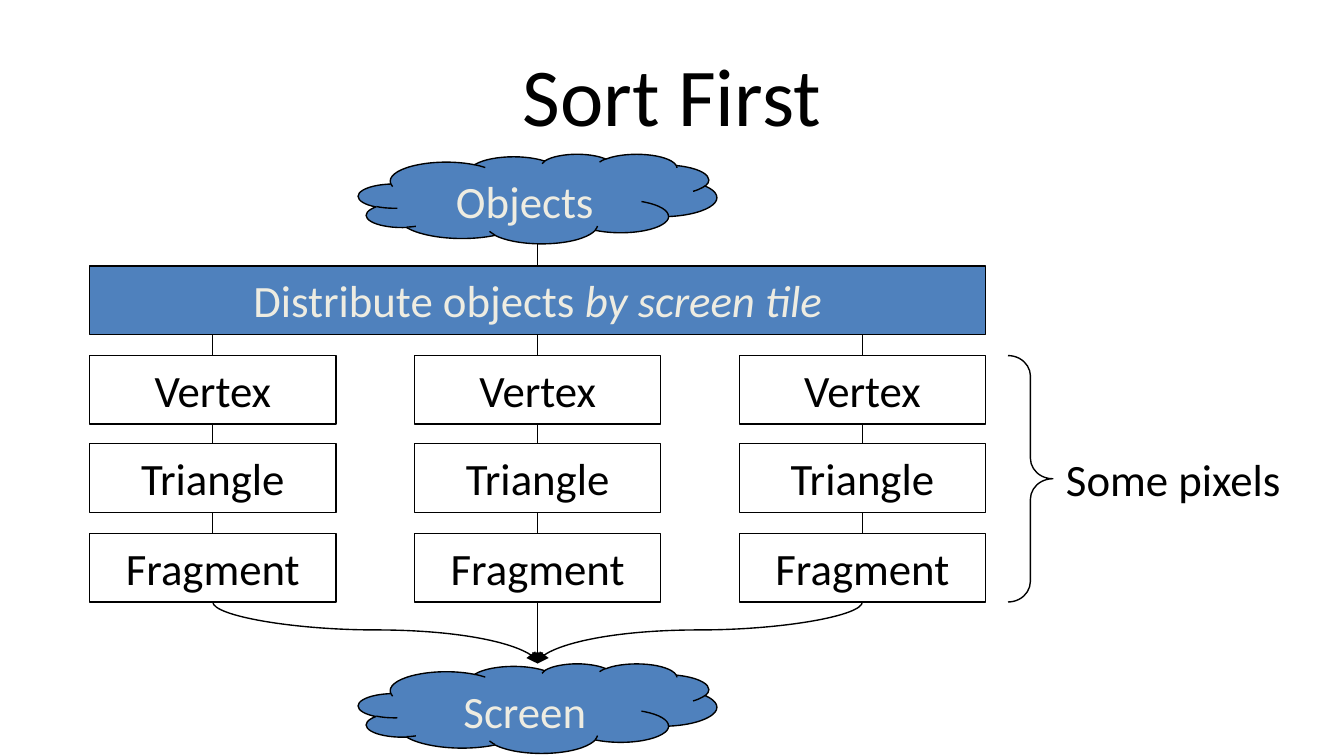
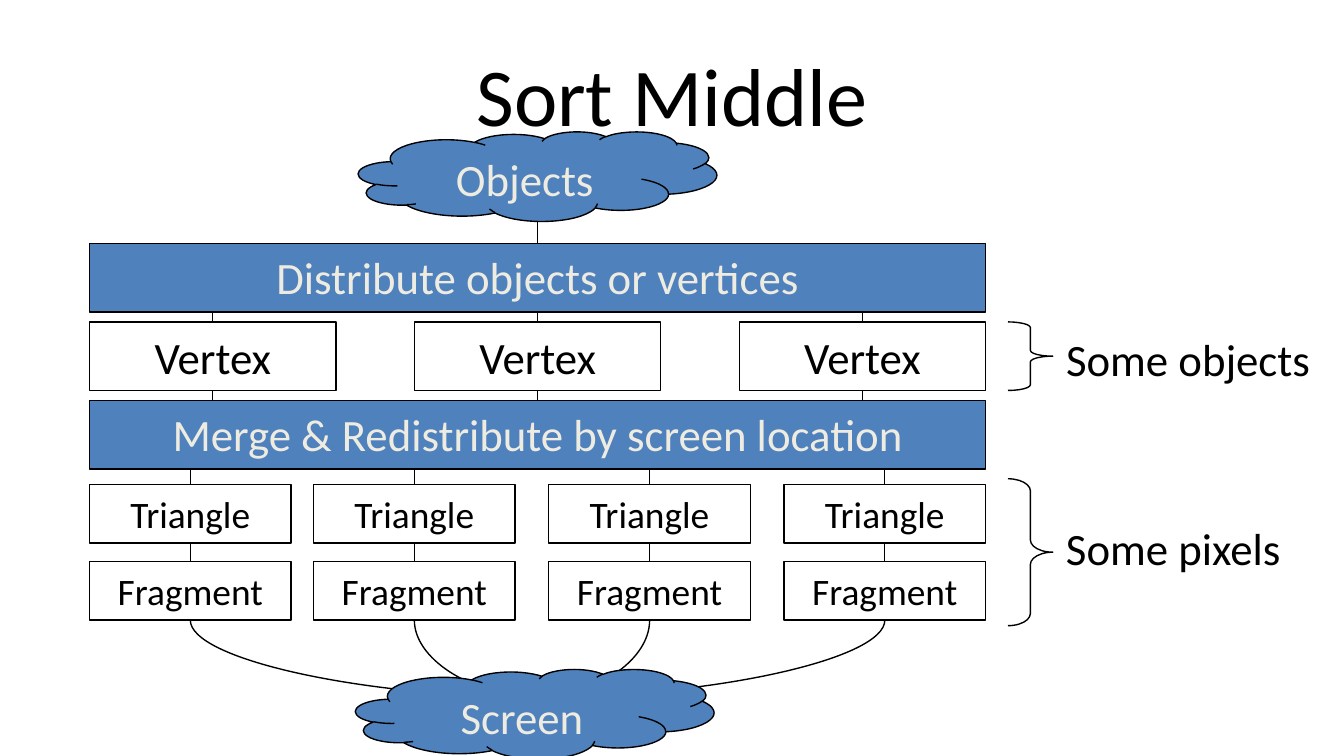
from pptx import Presentation
from pptx.dml.color import RGBColor
from pptx.enum.shapes import MSO_CONNECTOR, MSO_SHAPE
from pptx.enum.text import MSO_ANCHOR, MSO_AUTO_SIZE, PP_ALIGN
from pptx.oxml.ns import qn
from pptx.util import Pt
from lxml.etree import SubElement

PX = 9525
BLACK = RGBColor(0x00, 0x00, 0x00)
BLUE = RGBColor(0x4F, 0x81, 0xBD)
CREAM = RGBColor(0xEE, 0xEC, 0xE1)
FONT = "Calibri"

# Shared grid
MID = 384
CLOUD_W, CLOUD_H = 256, 64
BAR = [64]
THREE = [64 + 232 * i for i in range(3)]
FOUR = [64, 224, 392, 560]

# Each tier: text, italic ending, lefts, width, top, height, text size
# Each brace: top, height, bend, label, label top, label width
DECK = [
    dict(
        title="Sort First", start=110, screen=(256, 474), goal=474,
        curve="curvedConnector3",
        tiers=[
            ("Distribute objects ", "by screen tile", BAR, 640, 190, 49, 24),
            ("Vertex", "", THREE, 176, 254, 49, 24),
            ("Triangle", "", THREE, 176, 317, 49, 24),
            ("Fragment", "", THREE, 176, 381, 49, 24),
        ],
        braces=[(254, 176, 0.458, "Some pixels", 318, 179)],
    ),
    dict(
        title="Sort Middle", start=94, screen=(254, 478), goal=498,
        curve="curvedConnector2",
        tiers=[
            ("Distribute objects or vertices", "", BAR, 640, 174, 49, 24),
            ("Vertex", "", THREE, 176, 230, 49, 24),
            ("Merge & Redistribute by screen location", "", BAR, 640, 286, 49, 24),
            ("Triangle", "", FOUR, 144, 346, 42, 20),
            ("Fragment", "", FOUR, 144, 401, 42, 20),
        ],
        braces=[
            (342, 105, 0.273, "Some pixels", 367, 179),
            (230, 49, 0.128, "Some objects", 232, 195),
        ],
    ),
]


def put(shape, text, slant="", size=24, color=BLACK, fill=None, line=True,
        align=PP_ALIGN.CENTER, anchor=MSO_ANCHOR.TOP, grow=False, wrap=True):
    """Format a shape and write its text, with an optional italic ending."""
    shape.shadow.inherit = False
    if fill is None:
        shape.fill.background()
    else:
        shape.fill.solid()
        shape.fill.fore_color.rgb = fill
    if line:
        shape.line.color.rgb = BLACK
        shape.line.width = Pt(0.75)
    frame = shape.text_frame
    frame.word_wrap = wrap
    frame.vertical_anchor = anchor
    frame.auto_size = MSO_AUTO_SIZE.SHAPE_TO_FIT_TEXT if grow else MSO_AUTO_SIZE.NONE
    para = frame.paragraphs[0]
    para.alignment = align
    for part, tilt in ((text, False), (slant, True)):
        if part:
            run = para.add_run()
            run.text = part
            run.font.name = FONT
            run.font.size = Pt(size)
            run.font.color.rgb = color
            if tilt:
                run.font.italic = True


def link(slide, x1, y1, x2, y2, curve=None, arrow=False):
    """Join two points by a straight line or by a curve that leaves downward."""
    kind = MSO_CONNECTOR.STRAIGHT
    ends = [x1, y1, x2, y2]
    if curve:
        # A quarter turn swaps width and height about the same centre
        kind = MSO_CONNECTOR.CURVE
        cx, cy = (x1 + x2) / 2, (y1 + y2) / 2
        dx, dy = abs(x2 - x1) / 2, (y2 - y1) / 2
        side = dy if x1 < x2 else -dy
        ends = [cx + side, cy - dx, cx - side, cy + dx]
    wire = slide.shapes.add_connector(kind, *[round(v * PX) for v in ends])
    wire.line.color.rgb = BLACK
    wire.line.width = Pt(0.75)
    props = wire.element.spPr
    if curve:
        turn = 270 if x1 < x2 else 90
        props.find(qn("a:xfrm")).set("rot", str(turn * 60000))
        geom = props.find(qn("a:prstGeom"))
        geom.set("prst", curve)
        if curve == "curvedConnector3":
            SubElement(geom.find(qn("a:avLst")), qn("a:gd"), name="adj1", fmla="val 45500")
    if arrow:
        SubElement(props.find(qn("a:ln")), qn("a:tailEnd"), type="triangle")
    SubElement(props, qn("a:effectLst"))


deck = Presentation()
deck.slide_width, deck.slide_height = 960 * PX, 540 * PX

for page in DECK:
    slide = deck.slides.add_slide(deck.slide_layouts[5])
    shapes = slide.shapes

    # Tiers of the pipeline, each fed from the one above
    mids, end = [MID], page["start"] + CLOUD_H
    for text, slant, lefts, wide, top, high, size in page["tiers"]:
        bar = lefts == BAR
        if not bar:
            mids = [left + wide // 2 for left in lefts]
        for mid in mids:
            link(slide, mid, end, mid, top)
        for left in lefts:
            box = shapes.add_shape(MSO_SHAPE.RECTANGLE, left * PX, top * PX, wide * PX, high * PX)
            put(box, text, slant=slant, size=size, grow=True,
                color=CREAM if bar else BLACK, fill=BLUE if bar else None,
                anchor=MSO_ANCHOR.TOP if bar else MSO_ANCHOR.MIDDLE)
        end = top + high

    # Braces and their labels
    for top, high, bend, text, y, wide in page["braces"]:
        brace = shapes.add_shape(MSO_SHAPE.RIGHT_BRACE, 720 * PX, top * PX, 32 * PX, high * PX)
        brace.adjustments[0] = bend
        put(brace, "")
        label = shapes.add_textbox(752 * PX, y * PX, wide * PX, 48 * PX)
        put(label, text, line=False, align=PP_ALIGN.LEFT, grow=True, wrap=False)

    # Arrows to the screen
    for mid in mids:
        link(slide, mid, end, MID, page["goal"], arrow=True,
             curve=None if mid == MID else page["curve"])

    # Clouds at both ends
    for text, left, top in (("Objects", 256, page["start"]), ("Screen", *page["screen"])):
        cloud = shapes.add_shape(MSO_SHAPE.CLOUD, left * PX, top * PX, CLOUD_W * PX, CLOUD_H * PX)
        put(cloud, text, color=CREAM, fill=BLUE)

    # Title, in front of the clouds
    title = shapes.title
    title.left, title.top, title.width, title.height = 48 * PX, 22 * PX, 864 * PX, 90 * PX
    put(title, page["title"], size=44, line=False, anchor=MSO_ANCHOR.MIDDLE)
    title.element.getparent().append(title.element)

deck.save("out.pptx")
